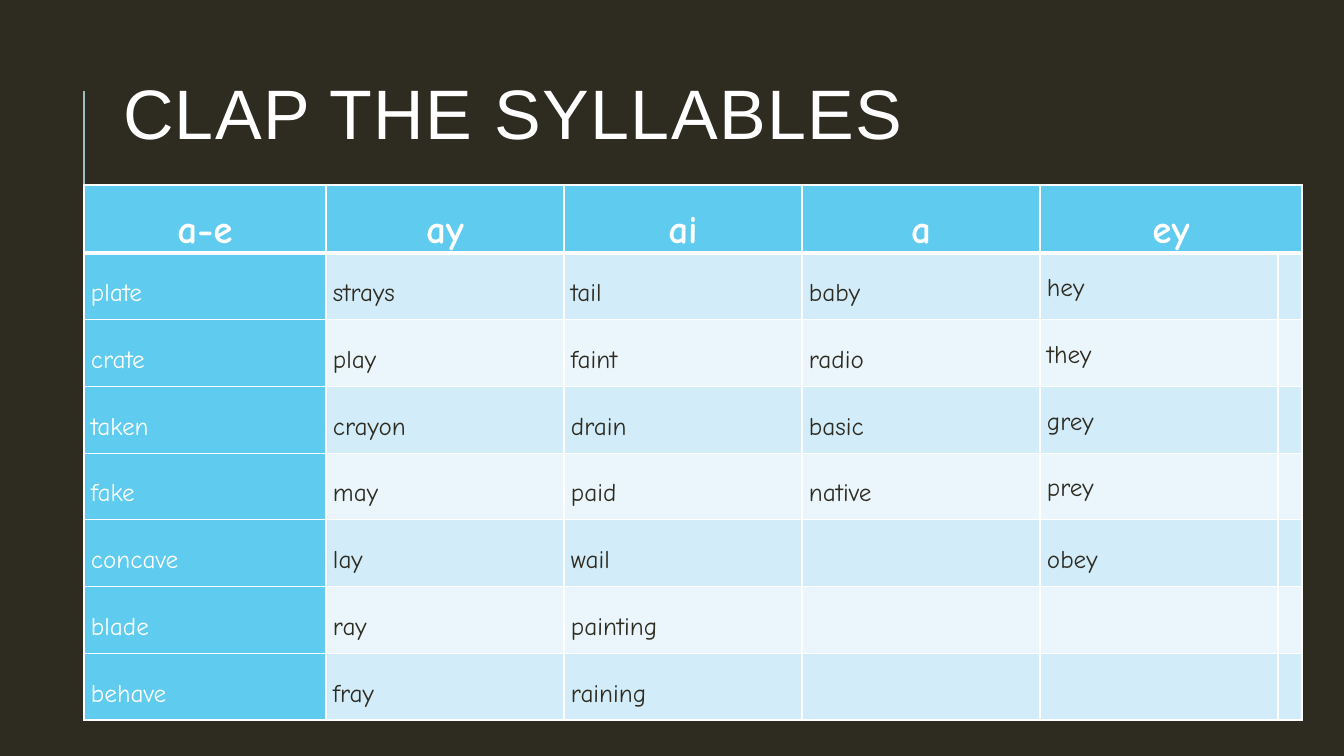
from lxml.etree import SubElement
from pptx import Presentation
from pptx.dml.color import RGBColor as Rgb
from pptx.enum.text import MSO_ANCHOR as Anchor, PP_ALIGN as Align
from pptx.oxml import parse_xml
from pptx.oxml.ns import nsdecls, qn
from pptx.util import Pt

SCALE = 914400 / 100.8
HEX = {
    "dark": "2E2B21", "white": "FFFFFF", "rule": "9CBEBD",
    "head": "5FCBEF", "odd": "D2ECF9", "even": "EAF6FC",
}
COLS = [242, 238, 238, 238, 238, 14]
HEAD = 68
WORDS = [
    ["a-e", "ay", "ai", "a", "ey", ""],
    ["plate", "strays", "tail", "baby", "hey", ""],
    ["crate", "play", "faint", "radio", "they", ""],
    ["taken", "crayon", "drain", "basic", "grey", ""],
    ["fake", "may", "paid", "native", "prey", ""],
    ["concave", "lay", "wail", "", "obey", ""],
    ["blade", "ray", "painting", "", "", ""],
    ["behave", "fray", "raining", "", "", ""],
]


def px(num):
    return round(num * SCALE)


def color(name):
    return Rgb.from_string(HEX[name])


def style(para, face, size, tone, bold=False):
    for run in para.runs:
        run.font.name = face
        run.font.size = Pt(size)
        run.font.bold = bold
        run.font.color.rgb = color(tone)


def title(slide, left, top, width, height):
    rule = slide.shapes.add_connector(1, px(left - 29), px(top + 127), px(left - 29), px(top + 26))
    rule.line.color.rgb = color("rule")
    rule.line.width = Pt(1.5)
    SubElement(rule._element.spPr, qn("a:effectLst"))
    head = slide.shapes.title
    head.left, head.top, head.width, head.height = map(px, (left, top, width, height))
    frame = head.text_frame
    frame.text = "CLAP THE SYLLABLES"
    frame.word_wrap = True
    frame.vertical_anchor = Anchor.MIDDLE
    para = frame.paragraphs[0]
    para.alignment = Align.LEFT
    para.line_spacing = 0.8
    style(para, "Arial", 50, "white")
    para.runs[0]._r.get_or_add_rPr().set("spc", "100")


def border(cell, row):
    sides = {"L": 1, "R": 1, "T": 3 if row == 1 else 1, "B": 3 if row == 0 else 1}
    for pos, (side, size) in enumerate(sides.items()):
        line = parse_xml(
            f'<a:ln{side} {nsdecls("a")} w="{Pt(size)}"><a:solidFill>'
            f'<a:srgbClr val="{HEX["white"]}"/></a:solidFill></a:ln{side}>')
        cell._tc.get_or_add_tcPr().insert(pos, line)


def write(cell, word, row, col):
    cell.margin_left = cell.margin_right = px(7)
    cell.margin_top = cell.margin_bottom = 0
    cell.vertical_anchor = Anchor.MIDDLE
    cell.text_frame.text = word
    para = cell.text_frame.paragraphs[0]
    para.alignment = Align.LEFT if row else Align.CENTER
    para.line_spacing = 1.15 if col == 4 and 0 < row < 5 else 1.5
    para.space_after = Pt(4)
    tone = "dark" if row and col else "white"
    style(para, "Comic Neue", 18 if row else 28, tone, row == 0)


def table(slide, left, top, width, height):
    box = map(px, (left, top, width, height))
    grid = slide.shapes.add_table(len(WORDS), len(COLS), *box).table
    for col, wide in zip(grid.columns, COLS):
        col.width = px(wide)
    step = (height - HEAD) / (len(WORDS) - 1)
    for num, row in enumerate(grid.rows):
        row.height = px(step if num else HEAD)
    for row, words in enumerate(WORDS):
        for col, word in enumerate(words):
            cell = grid.cell(row, col)
            band = "odd" if row % 2 else "even"
            cell.fill.solid()
            cell.fill.fore_color.rgb = color(band if row and col else "head")
            border(cell, row)
            if word:
                write(cell, word, row, col)
    grid.cell(0, 4).merge(grid.cell(0, 5))


def main():
    deck = Presentation()
    deck.slide_width, deck.slide_height = px(1344), px(756)
    slide = deck.slides.add_slide(deck.slide_layouts[5])
    slide.background.fill.solid()
    slide.background.fill.fore_color.rgb = color("dark")
    title(slide, 113, 65, 1071, 108)
    table(slide, 84, 185, sum(COLS), 535)
    deck.save("out.pptx")


if __name__ == "__main__":
    main()
